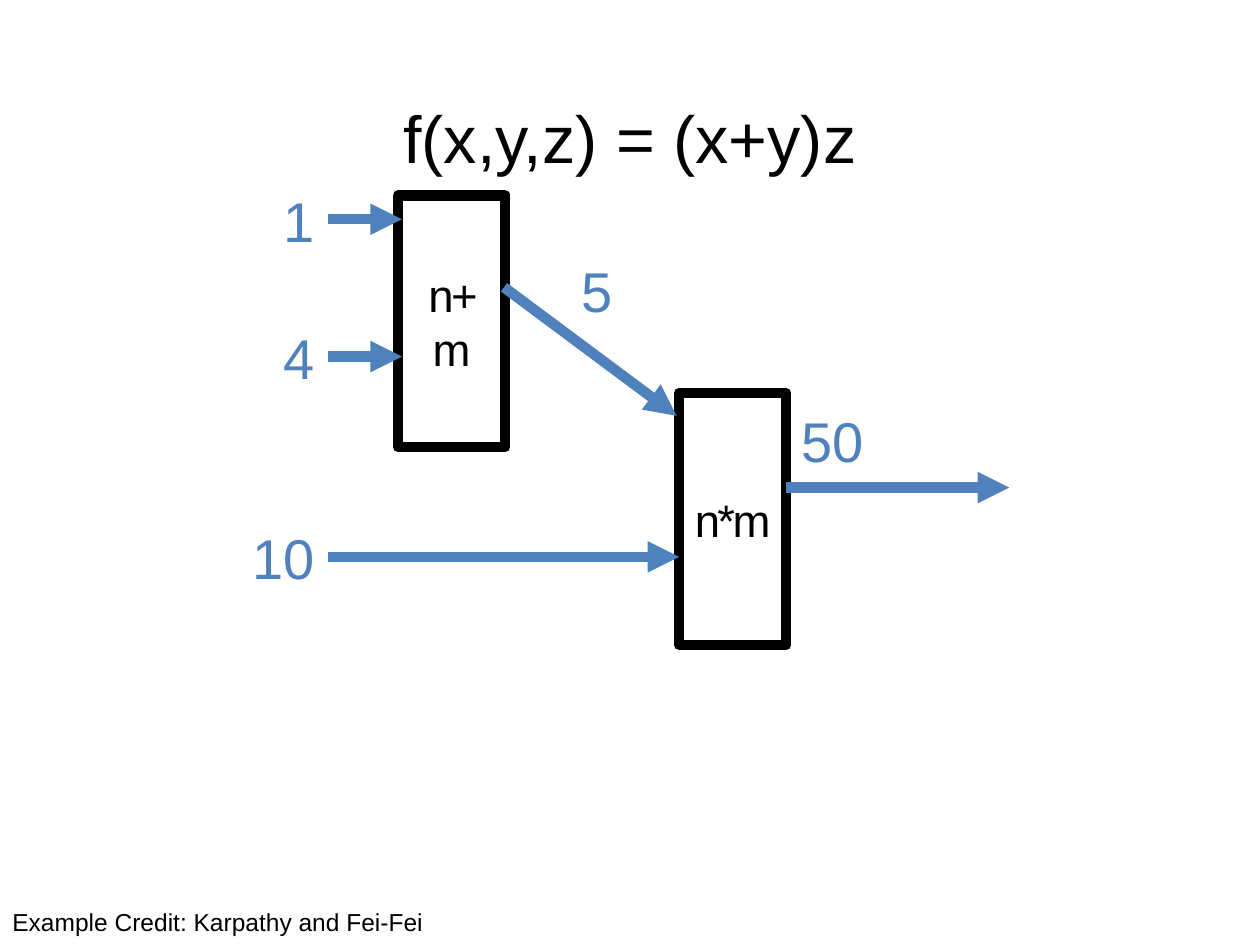
from dataclasses import dataclass

from pptx import Presentation
from pptx import util as u
from pptx.dml.color import RGBColor
from pptx.enum import shapes, text
from pptx.oxml.ns import qn
from pptx.shapes.autoshape import Shape
from pptx.slide import Slide
from pptx.text.text import TextFrame
from lxml import etree


@dataclass(frozen=True)
class Theme:
    font: str = "Arial"
    ink: RGBColor = RGBColor(0x00, 0x00, 0x00)
    paper: RGBColor = RGBColor(0xFF, 0xFF, 0xFF)
    flow: RGBColor = RGBColor(0x4F, 0x81, 0xBD)
    title_size: int = 38
    value_size: int = 32
    gate_size: int = 26
    credit_size: int = 14
    gate_spacing: int = -150
    stroke: int = 6


@dataclass(frozen=True)
class Gate:
    label: str
    left: float
    top: float
    width: float = 0.85
    height: float = 2.0


@dataclass(frozen=True)
class Label:
    words: str
    left: float
    top: float
    width: float
    align: text.PP_ALIGN
    height: float = 0.64
    size: int = Theme.value_size
    color: RGBColor = Theme.flow


@dataclass(frozen=True)
class Arrow:
    start: tuple[float, float]
    end: tuple[float, float]


THEME = Theme()
ALIGN = text.PP_ALIGN

ADD_GATE = Gate("n+m", 3.16, 1.55)
MULTIPLY_GATE = Gate("n*m", 5.39, 3.12)

INPUT_LEFT, INPUT_WIDTH = 1.83, 0.77
INPUT_RIGHT = INPUT_LEFT + INPUT_WIDTH
LABEL_RISE = 0.31  # from the top of an input label to its arrow
INPUTS = [("1", 1.43, 3.19), ("4", 2.52, 3.19), ("10", 4.11, MULTIPLY_GATE.left)]

LABELS = [Label(words, INPUT_LEFT, top, INPUT_WIDTH, ALIGN.RIGHT) for words, top, _ in INPUTS] + [
    Label("5", 4.24, 1.99, 1.0, ALIGN.CENTER),
    Label("50", 6.26, 3.18, 1.75, ALIGN.LEFT),
    Label("Example Credit: Karpathy and Fei-Fei", 0, 7.15, 3.53, ALIGN.LEFT,
          0.34, THEME.credit_size, THEME.ink),
]
ARROWS = [
    Arrow((INPUT_RIGHT, top + LABEL_RISE), (end, top + LABEL_RISE)) for _, top, end in INPUTS
] + [
    Arrow((4.0, 2.28), (5.37, 3.3)),
    Arrow((MULTIPLY_GATE.left + MULTIPLY_GATE.width, 3.87), (8.01, 3.87)),
]


def write(frame: TextFrame, words: str, size: int, color: RGBColor,
          align: text.PP_ALIGN, spacing: int = 0) -> None:
    """Put one run in the frame; spacing is in hundredths of a point."""
    frame.word_wrap = True
    paragraph = frame.paragraphs[0]
    paragraph.alignment = align
    run = paragraph.add_run()
    run.text = words
    run.font.name = THEME.font
    run.font.size = u.Pt(size)
    run.font.color.rgb = color
    if spacing:
        run.font._element.set("spc", str(spacing))


def place_title(slide: Slide, words: str) -> None:
    title = slide.shapes.title
    title.left, title.top = u.Inches(0.69), u.Inches(0.4)
    title.width, title.height = u.Inches(8.62), u.Inches(1.45)
    frame = title.text_frame
    frame.auto_size = text.MSO_AUTO_SIZE.NONE
    frame.vertical_anchor = text.MSO_ANCHOR.MIDDLE
    write(frame, words, THEME.title_size, THEME.ink, ALIGN.CENTER)
    frame.paragraphs[0].line_spacing = 0.9


def draw_gate(slide: Slide, gate: Gate) -> Shape:
    shape = slide.shapes.add_shape(
        shapes.MSO_SHAPE.RECTANGLE, u.Inches(gate.left), u.Inches(gate.top),
        u.Inches(gate.width), u.Inches(gate.height))
    shape.shadow.inherit = False
    shape.fill.solid()
    shape.fill.fore_color.rgb = THEME.paper
    shape.line.color.rgb = THEME.ink
    shape.line.width = u.Pt(THEME.stroke)
    shape.text_frame.vertical_anchor = text.MSO_ANCHOR.MIDDLE
    write(shape.text_frame, gate.label, THEME.gate_size, THEME.ink,
          ALIGN.CENTER, THEME.gate_spacing)
    return shape


def draw_label(slide: Slide, label: Label) -> Shape:
    box = slide.shapes.add_textbox(
        u.Inches(label.left), u.Inches(label.top),
        u.Inches(label.width), u.Inches(label.height))
    box.text_frame.auto_size = text.MSO_AUTO_SIZE.SHAPE_TO_FIT_TEXT
    write(box.text_frame, label.words, label.size, label.color, label.align)
    return box


def draw_arrow(slide: Slide, arrow: Arrow) -> None:
    connector = slide.shapes.add_connector(
        shapes.MSO_CONNECTOR.STRAIGHT,
        *(u.Inches(value) for value in arrow.start + arrow.end))
    connector.line.color.rgb = THEME.flow
    connector.line.width = u.Pt(THEME.stroke)
    etree.SubElement(connector.line._get_or_add_ln(), qn("a:tailEnd"), type="triangle")
    etree.SubElement(connector._element.spPr, qn("a:effectLst"))


def main() -> None:
    presentation = Presentation()
    presentation.slide_width, presentation.slide_height = u.Inches(10), u.Inches(7.5)
    title_only = presentation.slide_layouts.get_by_name("Title Only")
    slide = presentation.slides.add_slide(title_only)

    place_title(slide, "f(x,y,z) = (x+y)z")
    for gate in (ADD_GATE, MULTIPLY_GATE):
        draw_gate(slide, gate)
    for arrow in ARROWS:
        draw_arrow(slide, arrow)
    for label in LABELS:
        draw_label(slide, label)

    presentation.save("out.pptx")


if __name__ == "__main__":
    main()
